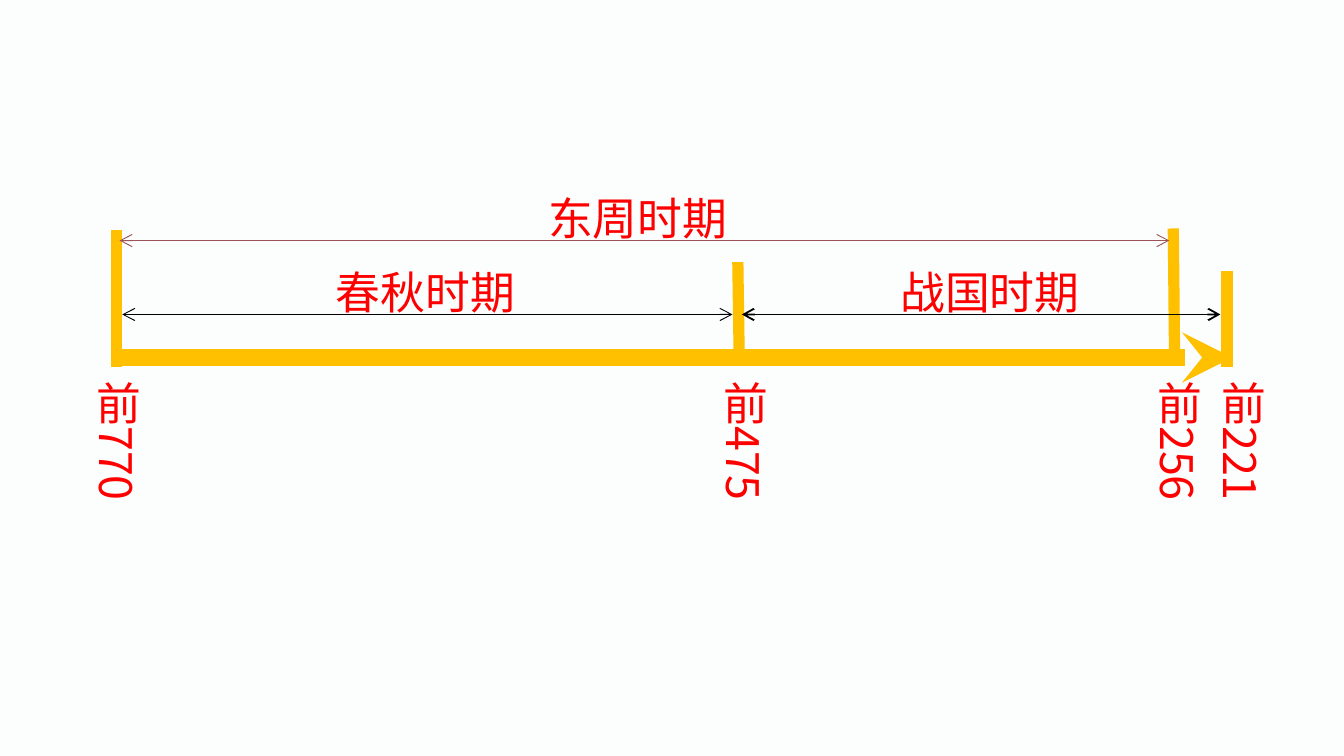
from collections import namedtuple

from lxml.etree import SubElement
from pptx import Presentation
from pptx.dml.color import RGBColor
from pptx.enum.shapes import MSO_CONNECTOR
from pptx.enum.text import MSO_AUTO_SIZE
from pptx.oxml.ns import qn
from pptx.util import Inches, Pt

COLORS = {
    "background": "FCFDFD",
    "axis": "FFC000",
    "label": "FF0000",
    "dynasty": "9D5458",
    "period": "000000",
}
FONT = "Noto Sans CJK SC"
COLUMNS = 1000
ROWS = COLUMNS * 9 / 16

Box = namedtuple("Box", "left top width height")
Year = namedtuple("Year", "text column top tilt bottom label_column")
Period = namedtuple("Period", "text start end row label_column color weight")

YEARS = [
    Year("前770", 4, 34, 0, 136, -32),
    Year("前475", 466, 58, 1, 129, 435),
    Year("前256", 790, 33, 1, 133, 758),
    Year("前221", 830, 65, 0, 136, 805),
]
PERIODS = [
    Period("东周时期", 6, 787, 42, 315, "dynasty", 0.5),
    Period("春秋时期", 8, 462, 97, 157, "period", 0.5),
    Period("战国时期", 469, 825, 97, 577, "period", 1),
]


def add_line(slide, start, end, color, weight, head=None, tail=None):
    line = slide.shapes.add_connector(MSO_CONNECTOR.STRAIGHT, *start, *end)
    line.line.color.rgb = RGBColor.from_string(COLORS[color])
    line.line.width = Pt(weight)
    outline = line.line._get_or_add_ln()
    for tag, arrow in (("a:headEnd", head), ("a:tailEnd", tail)):
        if arrow:
            SubElement(outline, qn(tag), type=arrow)
    SubElement(line._element.spPr, qn("a:effectLst"))


def add_label(slide, text, box, vertical=False):
    frame = slide.shapes.add_textbox(*box).text_frame
    frame.word_wrap = False
    frame.auto_size = MSO_AUTO_SIZE.SHAPE_TO_FIT_TEXT
    if vertical:
        frame._txBody.bodyPr.set("vert", "eaVert")
    paragraph = frame.paragraphs[0]
    run = paragraph.add_run()
    run.text = text
    paragraph.font.size = Pt(24)
    paragraph.font.name = FONT
    paragraph.font.color.rgb = RGBColor.from_string(COLORS["label"])
    SubElement(run.font._element, qn("a:ea"), typeface=FONT)


def add_timeline(slide, box, column, row):
    def at(x, y):
        return round(box.left + x * column), round(box.top + y * row)

    def area(x, y, columns, rows):
        return Box(*at(x, y), round(columns * column), round(rows * row))

    axis_row = 129
    for year in YEARS:
        add_line(slide, at(year.column, year.top),
                 at(year.column + year.tilt, year.bottom), "axis", 6)
    add_line(slide, at(0, axis_row), (box.left + box.width, at(0, axis_row)[1]),
             "axis", 9, tail="stealth")
    for year in YEARS:
        add_label(slide, year.text, area(year.label_column, axis_row + 8, 61, 94),
                  vertical=True)
    for period in PERIODS:
        add_line(slide, at(period.start, period.row), at(period.end, period.row),
                 period.color, period.weight, head="arrow", tail="arrow")
        add_label(slide, period.text,
                  area(period.label_column, period.row - 42, 155, 50))


def main():
    deck = Presentation()
    deck.slide_width = Inches(10)
    deck.slide_height = deck.slide_width * 9 // 16
    slide = deck.slides.add_slide(deck.slide_layouts[6])
    fill = slide.background.fill
    fill.solid()
    fill.fore_color.rgb = RGBColor.from_string(COLORS["background"])
    column, row = deck.slide_width / COLUMNS, deck.slide_height / ROWS
    timeline = Box(*map(round, (83 * column, 137 * row, 834 * column, 231 * row)))
    add_timeline(slide, timeline, column, row)
    deck.save("out.pptx")


if __name__ == "__main__":
    main()
